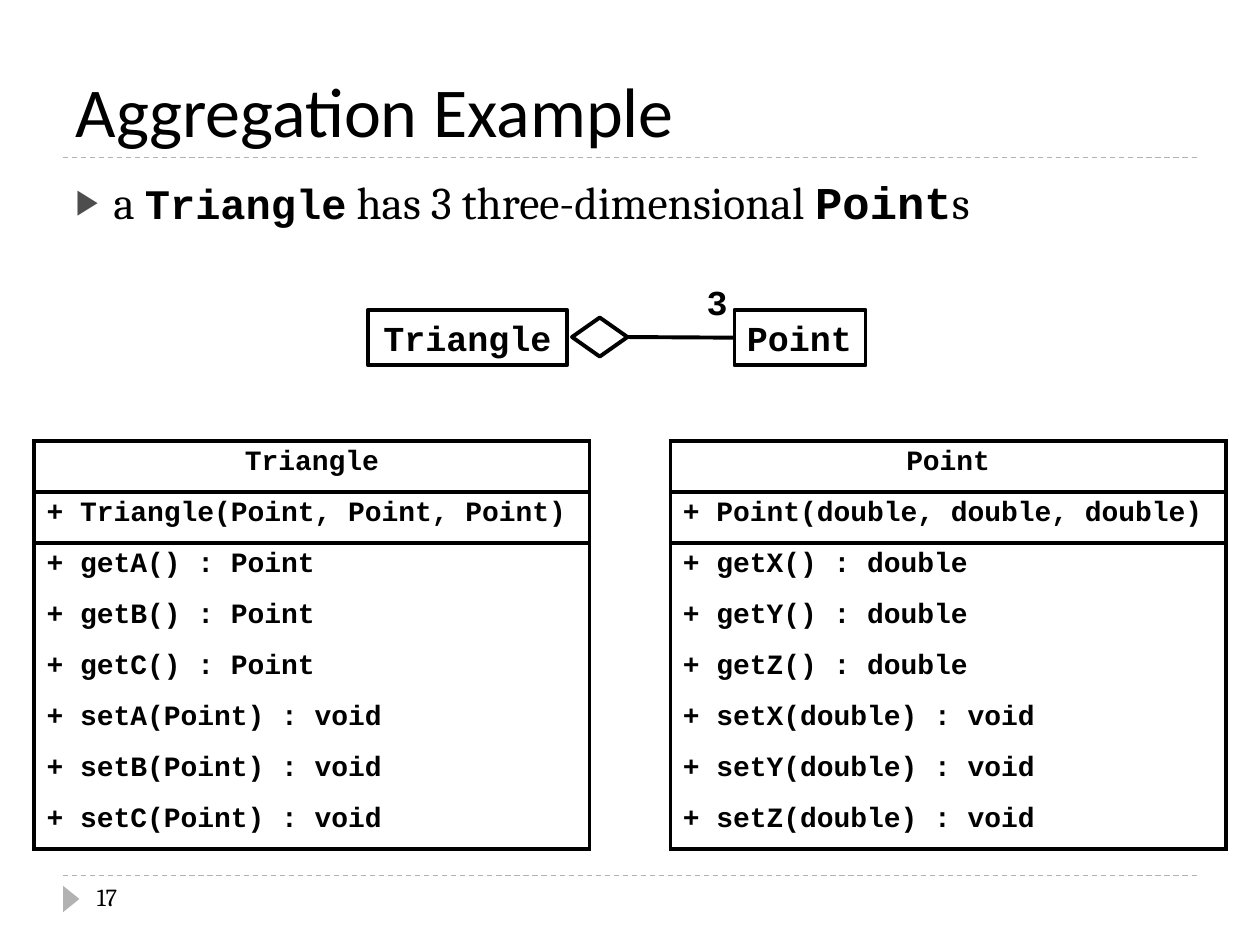
from lxml import etree
from pptx import Presentation
from pptx import util as u
from pptx.dml.color import RGBColor
from pptx.enum import dml, shapes, text
from pptx.oxml.ns import qn

BLACK = RGBColor(0, 0, 0)
WHITE = RGBColor(0xFF, 0xFF, 0xFF)
GREY = RGBColor(0xB2, 0xB2, 0xB2)
DARK = RGBColor(0x4D, 0x4D, 0x4D)
HEAD, BODY, CODE = "Calibri", "Cambria", "Courier New"
LEFT, MID = text.PP_ALIGN.LEFT, text.PP_ALIGN.CENTER
TOP, LOW = text.MSO_ANCHOR.TOP, text.MSO_ANCHOR.BOTTOM
KIND = shapes.MSO_SHAPE
PEN = 2.25


def box(*sizes):
    return [u.Inches(size) for size in sizes]


def write(frame, *runs, font=CODE, size=20, bold=False, align=LEFT,
          anchor=TOP, wrap=True):
    """Fill a frame; a run is a string or (string, font, size, bold)."""
    frame.word_wrap = wrap
    frame.vertical_anchor = anchor
    para = frame.paragraphs[0]
    para.alignment = align
    for item in runs:
        if isinstance(item, str):
            item = (item, font, size, bold)
        run = para.add_run()
        run.text, run.font.name, points, run.font.bold = item
        run.font.size = u.Pt(points)
        run.font.color.rgb = BLACK
    return para


def holder(shape, *place):
    shape.left, shape.top, shape.width, shape.height = box(*place)
    shape.text_frame.auto_size = text.MSO_AUTO_SIZE.NONE
    return shape.text_frame


def bullet(para, char, color, percent):
    para.space_before = u.Pt(6)
    props = para._p.get_or_add_pPr()
    props.set("marL", str(u.Inches(0.3)))
    props.set("indent", str(u.Inches(-0.3)))
    tint = etree.SubElement(props, qn("a:buClr"))
    etree.SubElement(tint, qn("a:srgbClr"), val=str(color))
    etree.SubElement(props, qn("a:buSzPct"), val=str(percent * 1000))
    etree.SubElement(props, qn("a:buChar"), char=char)


def form(slide, kind, *place, fill=None, line=BLACK):
    shape = slide.shapes.add_shape(kind, *box(*place))
    shape.shadow.inherit = False
    if fill is None:
        shape.fill.background()
    else:
        shape.fill.solid()
        shape.fill.fore_color.rgb = fill
    if line is None:
        shape.line.fill.background()
    else:
        shape.line.color.rgb = line
        shape.line.width = u.Pt(PEN)
    return shape


def link(slide, *ends, color=BLACK, width=PEN, dash=None):
    line = slide.shapes.add_connector(shapes.MSO_CONNECTOR.STRAIGHT, *box(*ends))
    line.line.color.rgb = color
    line.line.width = u.Pt(width)
    if dash:
        line.line.dash_style = dash
    etree.SubElement(line._element.spPr, qn("a:effectLst"))
    return line


def label(slide, words, *place, **fmt):
    frame = slide.shapes.add_textbox(*box(*place)).text_frame
    write(frame, words, **fmt)


def edge(cell, drawn):
    """Draw the sides named in drawn and clear the others."""
    props = cell._tc.get_or_add_tcPr()
    for side in "LRTB":
        line = etree.SubElement(props, qn("a:ln" + side), w=str(u.Pt(PEN)))
        if side in drawn:
            fill = etree.SubElement(line, qn("a:solidFill"))
            etree.SubElement(fill, qn("a:srgbClr"), val=str(BLACK))
        else:
            etree.SubElement(line, qn("a:noFill"))


def card(slide, left, name, maker, methods):
    """A UML class: name, constructor, then one open block of methods."""
    rows = [name, maker, *methods]
    table = slide.shapes.add_table(len(rows), 1, *box(left, 3.5, 4.41, 3.24)).table
    table.first_row = table.horz_banding = False
    for i, words in enumerate(rows):
        cell = table.cell(i, 0)
        sides = "LR" + "T" * (i <= 2) + "B" * (i < 2 or i == len(rows) - 1)
        edge(cell, sides)
        cell.fill.solid()
        cell.fill.fore_color.rgb = WHITE
        write(cell.text_frame, words if i == 0 else "+ " + words,
              size=16, bold=True, align=LEFT if i else MID)


def access(axes, kind):
    return ([f"get{axis}() : {kind}" for axis in axes]
            + [f"set{axis}({kind}) : void" for axis in axes])


def main():
    deck = Presentation()
    deck.slide_width, deck.slide_height = box(10, 7.5)
    slide = deck.slides.add_slide(deck.slide_layouts[1])

    # Rules and page marker
    for y in (6.95, 1.25):
        link(slide, 0.5, y, 9.5, y, color=GREY, width=0.75,
             dash=dml.MSO_LINE.DASH)
    mark = form(slide, KIND.ISOSCELES_TRIANGLE, 0.46, 7.07, 0.21, 0.13,
                fill=GREY, line=None)
    mark.rotation = 90
    label(slide, "17", 0.67, 6.95, 2.17, 0.4, font=BODY, size=14)

    # Title and bullet
    title, body = slide.placeholders
    write(holder(title, 0.5, 0.17, 9, 1.08), "Aggregation Example",
          font=HEAD, size=40, anchor=LOW)
    para = write(holder(body, 0.5, 1.33, 9, 5.4),
                 "a ", ("Triangle", CODE, 24, True),
                 " has 3 three-dimensional ", ("Point", CODE, 26, True), "s",
                 font=BODY, size=26)
    bullet(para, "▶", DARK, 76)

    # Aggregation diagram
    whole = form(slide, KIND.RECTANGLE, 2.92, 2.46, 1.58, 0.44)
    write(whole.text_frame, "Triangle", bold=True, align=MID)
    part = form(slide, KIND.RECTANGLE, 5.83, 2.46, 1.04, 0.44)
    write(part.text_frame, "Point", bold=True, wrap=False)
    gem = form(slide, KIND.DIAMOND, 4.54, 2.52, 0.44, 0.31)
    line = link(slide, 4.98, 2.68, 5.83, 2.68)
    line.begin_connect(gem, 3)
    line.end_connect(part, 1)
    label(slide, "3", 5.51, 2.18, 0.37, 0.44, bold=True, wrap=False)

    # Class tables
    card(slide, 0.27, "Triangle", "Triangle(Point, Point, Point)",
         access("ABC", "Point"))
    card(slide, 5.32, "Point", "Point(double, double, double)",
         access("XYZ", "double"))

    deck.save("out.pptx")


if __name__ == "__main__":
    main()
